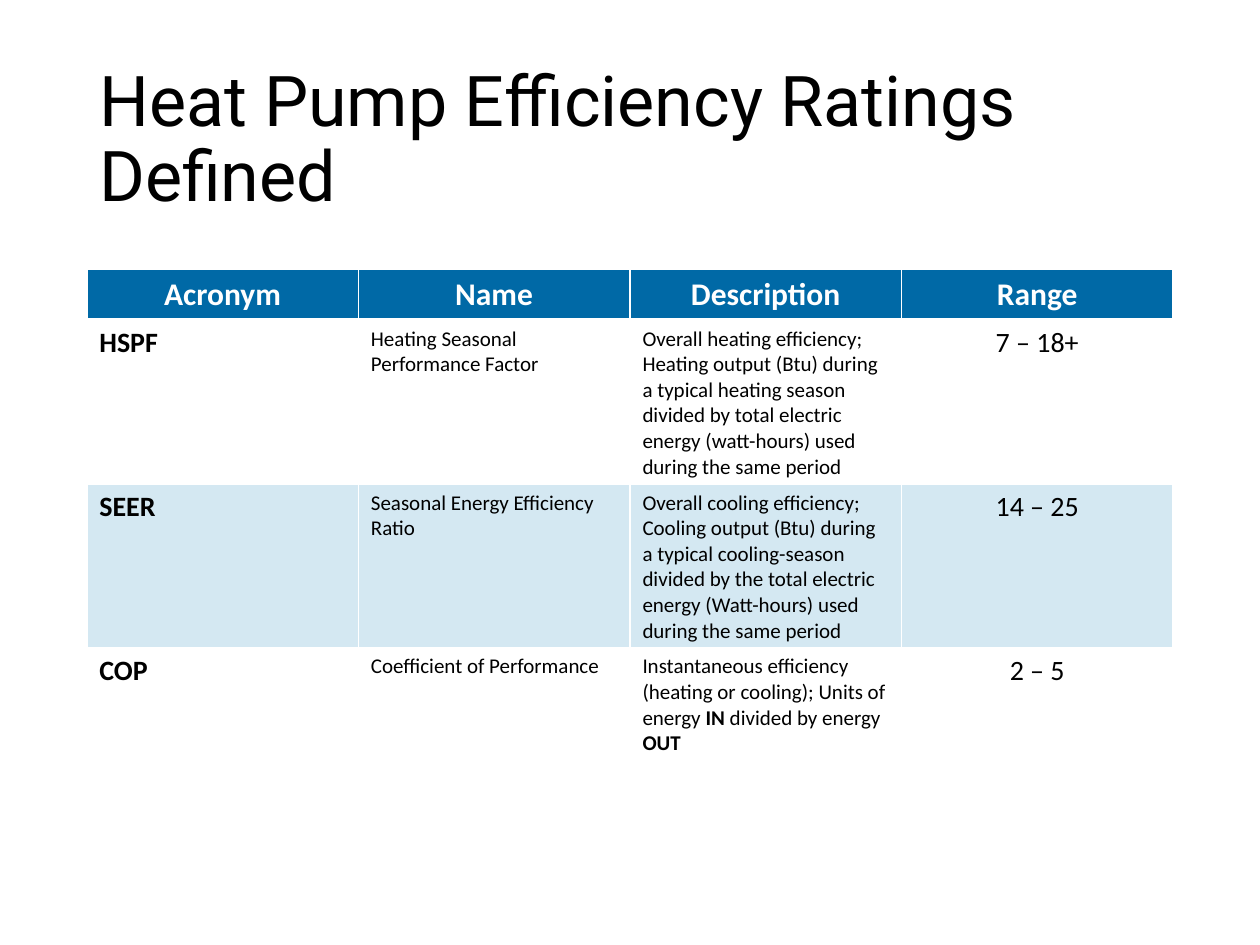
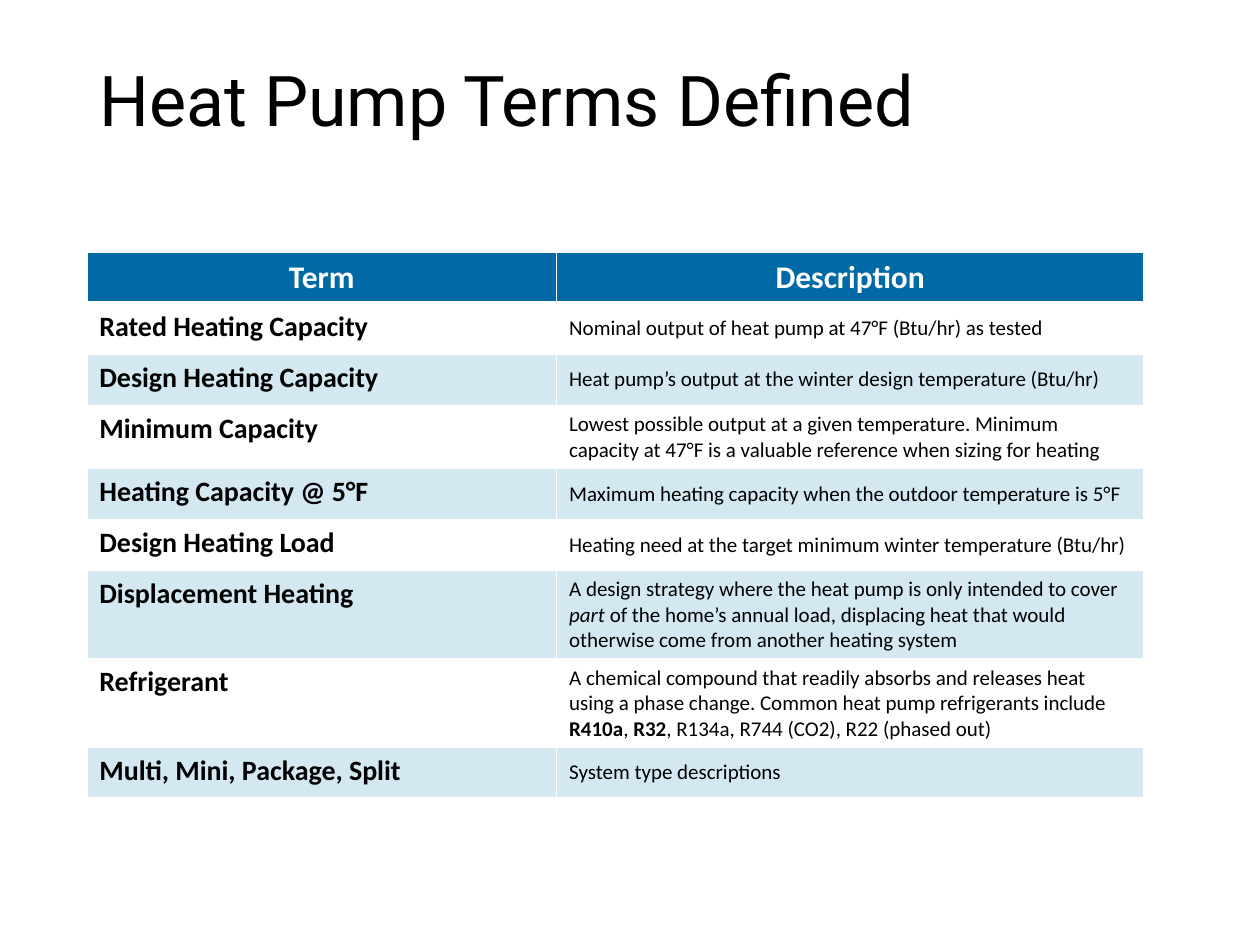
import pptx
import pptx.dml.color
import pptx.enum.text
import pptx.oxml.ns
import pptx.util
from lxml import etree
from pptx.util import Cm, Pt

# Shared look
HEADER_BLUE = "0069A6"
BAND_BLUE = "D4E8F2"
WHITE = "FFFFFF"
BLACK = "000000"
TITLE_FONT = "Roboto"
TABLE_FONT = "Calibri"
LEFT = Cm(1.75)
ROW_HEIGHT = Cm(1.03)

ANCHOR = pptx.enum.text.MSO_ANCHOR
ALIGN = pptx.enum.text.PP_ALIGN

# A cell is a string, or a list of (text, style) pairs
RATINGS = [
    ["Acronym", "Name", "Description", "Range"],
    ["HSPF", "Heating Seasonal Performance Factor",
     "Overall heating efficiency; Heating output (Btu) during a typical heating season "
     "divided by total electric energy (watt-hours) used during the same period",
     "7 – 18+"],
    ["SEER", "Seasonal Energy Efficiency Ratio",
     "Overall cooling efficiency; Cooling output (Btu) during a typical cooling-season "
     "divided by the total electric energy (Watt-hours) used during the same period",
     "14 – 25"],
    ["COP", "Coefficient of Performance",
     [("Instantaneous efficiency (heating or cooling); Units of energy ", ""),
      ("IN", "bold"), (" divided by energy ", ""), ("OUT", "bold")],
     "2 – 5"],
]

TERMS = [
    ["Term", "Description"],
    ["Rated Heating Capacity", "Nominal output of heat pump at 47°F (Btu/hr) as tested"],
    ["Design Heating Capacity", "Heat pump’s output at the winter design temperature (Btu/hr)"],
    ["Minimum Capacity",
     "Lowest possible output at a given temperature. Minimum capacity at 47°F is a "
     "valuable reference when sizing for heating"],
    ["Heating Capacity @ 5°F", "Maximum heating capacity when the outdoor temperature is 5°F"],
    ["Design Heating Load", "Heating need at the target minimum winter temperature (Btu/hr)"],
    ["Displacement Heating",
     [("A design strategy where the heat pump is only intended to cover ", ""),
      ("part ", "italic"),
      ("of the home’s annual load, displacing heat that would otherwise come from "
       "another heating system", "")]],
    ["Refrigerant",
     [("A chemical compound that readily absorbs and releases heat using a phase change. "
       "Common heat pump refrigerants include ", ""),
      ("R410a", "bold"), (",", ""), (" R32", "bold"),
      (", R134a, R744 (CO2), R22 (phased out)", "")]],
    ["Multi, Mini, Package, Split", "System type descriptions"],
]

# Column styles: size, bold, alignment, anchor
HEADING = (18, True, ALIGN.CENTER, ANCHOR.TOP)
LABEL = (16, True, ALIGN.LEFT, ANCHOR.TOP)
DETAIL = (12, False, ALIGN.LEFT, ANCHOR.TOP)
DETAIL_MIDDLE = (12, False, ALIGN.LEFT, ANCHOR.MIDDLE)
RANGE = (16, False, ALIGN.CENTER, ANCHOR.TOP)


def color(hex_code):
    return pptx.dml.color.RGBColor.from_string(hex_code)


def set_font(paragraph, name, size, hex_code, bold=False):
    font = paragraph.font
    font.name = name
    font.size = Pt(size)
    font.bold = bold
    font.color.rgb = color(hex_code)


def add_title(slide, text, height):
    title = slide.shapes.add_textbox(LEFT, Cm(1.01), Cm(21.9), height)
    frame = title.text_frame
    frame.word_wrap = True
    frame.vertical_anchor = ANCHOR.MIDDLE
    paragraph = frame.paragraphs[0]
    paragraph.text = text
    paragraph.line_spacing = 0.9
    set_font(paragraph, TITLE_FONT, 40, BLACK)


def add_borders(cell, top, bottom):
    properties = cell._tc.get_or_add_tcPr()
    for side, width in (("L", 1), ("R", 1), ("T", top), ("B", bottom)):
        line = etree.SubElement(properties, pptx.oxml.ns.qn(f"a:ln{side}"), w=str(Pt(width)))
        fill = etree.SubElement(line, pptx.oxml.ns.qn("a:solidFill"))
        etree.SubElement(fill, pptx.oxml.ns.qn("a:srgbClr"), val=WHITE)


def write_cell(cell, content, style, text_color):
    size, bold, alignment, anchor = style
    cell.vertical_anchor = anchor
    paragraph = cell.text_frame.paragraphs[0]
    paragraph.alignment = alignment
    set_font(paragraph, TABLE_FONT, size, text_color, bold)
    if isinstance(content, str):
        content = [(content, "bold" if bold else "")]
    for text, emphasis in content:
        run = paragraph.add_run()
        run.text = text
        run.font.bold = emphasis == "bold"
        if emphasis == "italic":
            run.font.italic = True


def add_definitions(slide, rows, top, widths, styles):
    table = slide.shapes.add_table(len(rows), len(widths), LEFT, top,
                                   sum(widths), ROW_HEIGHT * len(rows)).table
    table.horz_banding = False
    for column, width in zip(table.columns, widths):
        column.width = width
    for r, row in enumerate(rows):
        is_header = r == 0
        band = HEADER_BLUE if is_header else WHITE if r % 2 else BAND_BLUE
        for c, content in enumerate(row):
            cell = table.cell(r, c)
            add_borders(cell, top=3 if r == 1 else 1, bottom=3 if is_header else 1)
            cell.fill.solid()
            cell.fill.fore_color.rgb = color(band)
            write_cell(cell, content, HEADING if is_header else styles[c],
                       WHITE if is_header else BLACK)


def main():
    deck = pptx.Presentation()
    deck.slide_width, deck.slide_height = Cm(25.4), Cm(19.05)
    blank = deck.slide_layouts[6]

    # Efficiency ratings
    ratings = deck.slides.add_slide(blank)
    add_title(ratings, "Heat Pump Efficiency Ratings Defined", Cm(3.68))
    add_definitions(ratings, RATINGS, Cm(5.42), [Cm(5.475)] * 4,
                    [LABEL, DETAIL, DETAIL, RANGE])

    # Terms
    terms = deck.slides.add_slide(blank)
    add_title(terms, "Heat Pump Terms Defined", Cm(2.18))
    add_definitions(terms, TERMS, Cm(5.08), [Cm(9.47), Cm(11.84)],
                    [LABEL, DETAIL_MIDDLE])

    deck.save("out.pptx")


if __name__ == "__main__":
    main()
